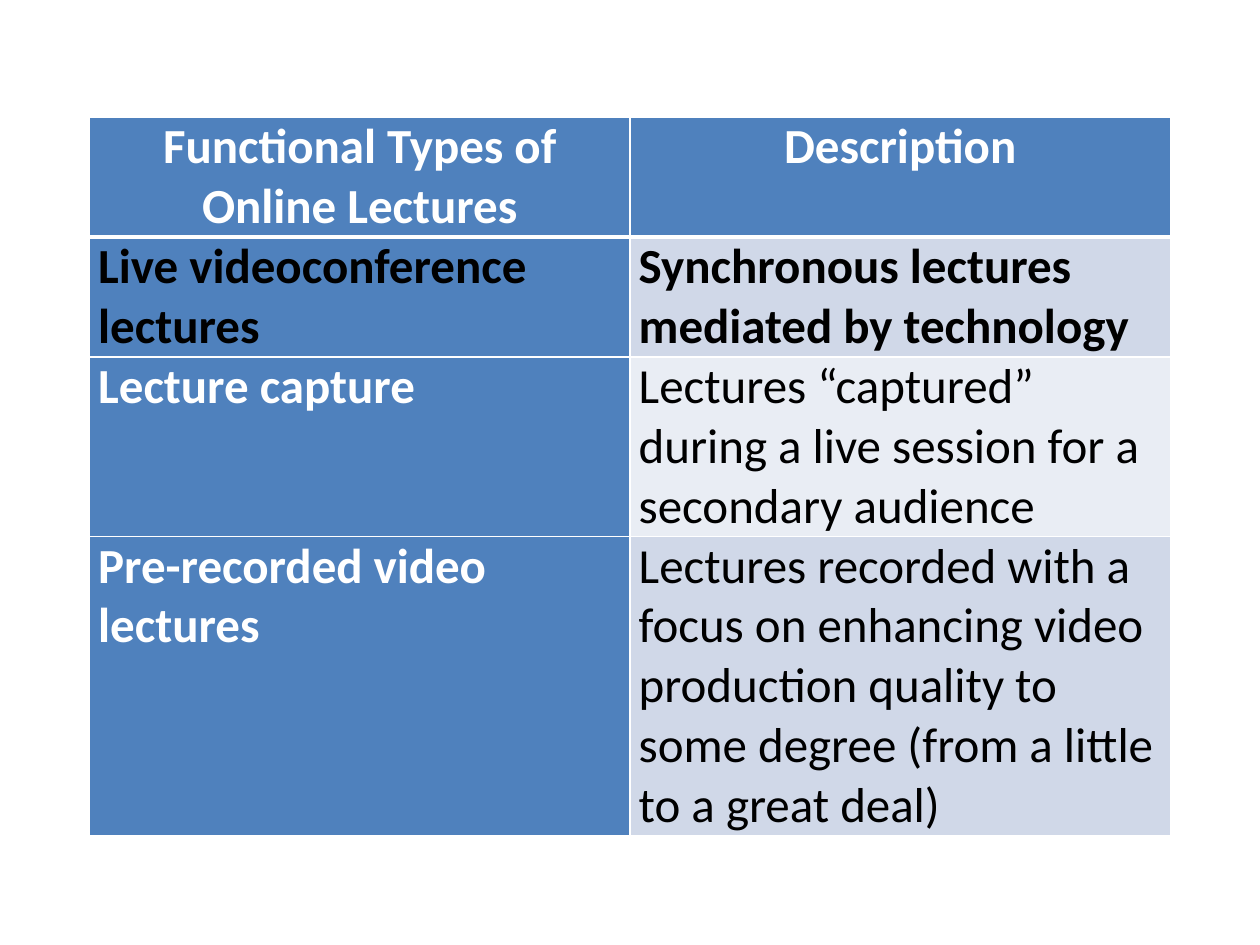
from dataclasses import dataclass

from lxml.etree import SubElement as Sub
from pptx import Presentation
from pptx.dml.color import RGBColor
from pptx.enum.text import PP_ALIGN as Align
from pptx.oxml.ns import qn
from pptx.util import Inches, Pt

WIDE, HIGH = 10, 7.5
LEFT, TOP = 0.71, 0.93
COL = (WIDE - 2 * LEFT) / 2
LINE = 0.47  # height of one text line
BLUE, WHITE, BLACK = "4F81BD", "FFFFFF", "000000"
BANDS = ("D0D8E8", "E9EDF4")


@dataclass
class Row:
    kind: str
    about: str
    lines: int
    key: bool = False


HEAD = Row("Functional Types of Online Lectures", "Description", 2)
ROWS = [
    Row("Live videoconference lectures",
        "Synchronous lectures mediated by technology", 2, key=True),
    Row("Lecture capture",
        "Lectures “captured” during a live session for a secondary audience", 3),
    Row("Pre-recorded video lectures",
        "Lectures recorded with a focus on enhancing video production quality "
        "to some degree (from a little to a great deal)", 5),
]


def color(code: str) -> RGBColor:
    return RGBColor.from_string(code)


def write(cell, text: str, *, ink: str = BLACK, bold: bool = False,
          align: Align = Align.LEFT) -> None:
    para = cell.text_frame.paragraphs[0]
    para.alignment = align
    run = para.add_run()
    run.text = text
    font = run.font
    font.name, font.size, font.bold = "Calibri", Pt(28), bold
    font.color.rgb = color(ink)


def paint(cell, fill: str, base: float = 1) -> None:
    """Set margins, white borders and fill; base is the lower border in points."""
    cell.margin_left = cell.margin_right = Inches(0.07)
    cell.margin_top = cell.margin_bottom = 0
    props = cell._tc.get_or_add_tcPr()
    for side, width in zip("LRTB", (1, 1, 1, base)):
        edge = Sub(props, qn(f"a:ln{side}"), w=str(Pt(width)))
        solid = Sub(edge, qn("a:solidFill"))
        Sub(solid, qn("a:srgbClr"), val=WHITE)
    cell.fill.solid()
    cell.fill.fore_color.rgb = color(fill)


def main() -> None:
    deck = Presentation()
    deck.slide_width, deck.slide_height = Inches(WIDE), Inches(HIGH)
    slide = deck.slides.add_slide(deck.slide_layouts[6])

    # Table grid: row heights follow the number of text lines
    rows = [HEAD, *ROWS]
    tall = LINE * sum(row.lines for row in rows)
    table = slide.shapes.add_table(len(rows), 2, Inches(LEFT), Inches(TOP),
                                   Inches(2 * COL), Inches(tall)).table
    for col in table.columns:
        col.width = Inches(COL)
    for line, row in zip(table.rows, rows):
        line.height = Inches(LINE * row.lines)

    # Header
    for cell, text in zip(table.rows[0].cells, (HEAD.kind, HEAD.about)):
        paint(cell, BLUE, base=3)
        write(cell, text, ink=WHITE, bold=True, align=Align.CENTER)

    # Body: blue first column, banded second column
    for i, row in enumerate(ROWS):
        kind, about = table.rows[i + 1].cells
        paint(kind, BLUE)
        write(kind, row.kind, ink=BLACK if row.key else WHITE, bold=True)
        paint(about, BANDS[i % 2])
        write(about, row.about, bold=row.key)

    # The header's lower border is shared with the first body row
    for cell in table.rows[1].cells:
        cell._tc.tcPr.find(qn("a:lnT")).set("w", str(Pt(3)))

    deck.save("out.pptx")


if __name__ == "__main__":
    main()
